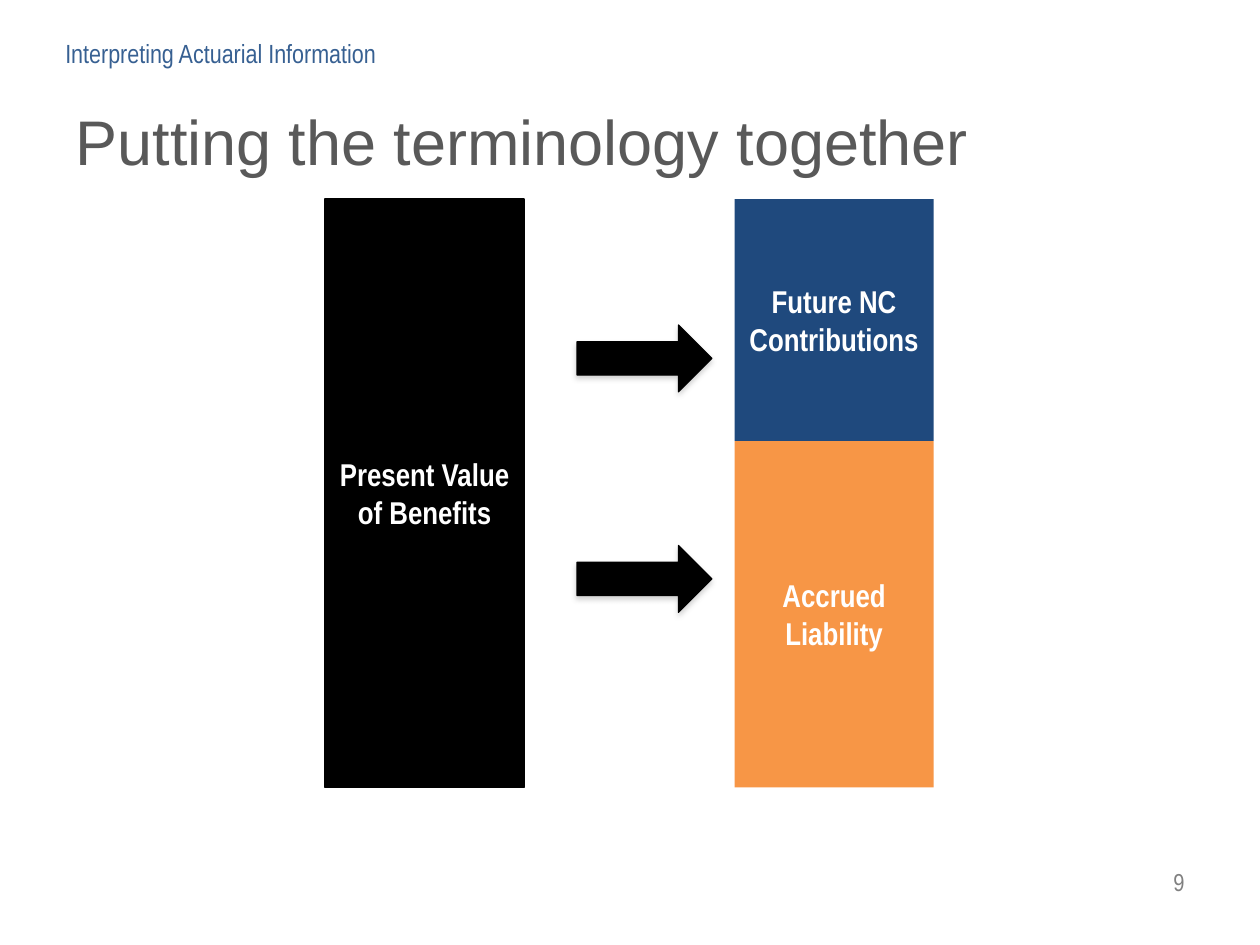
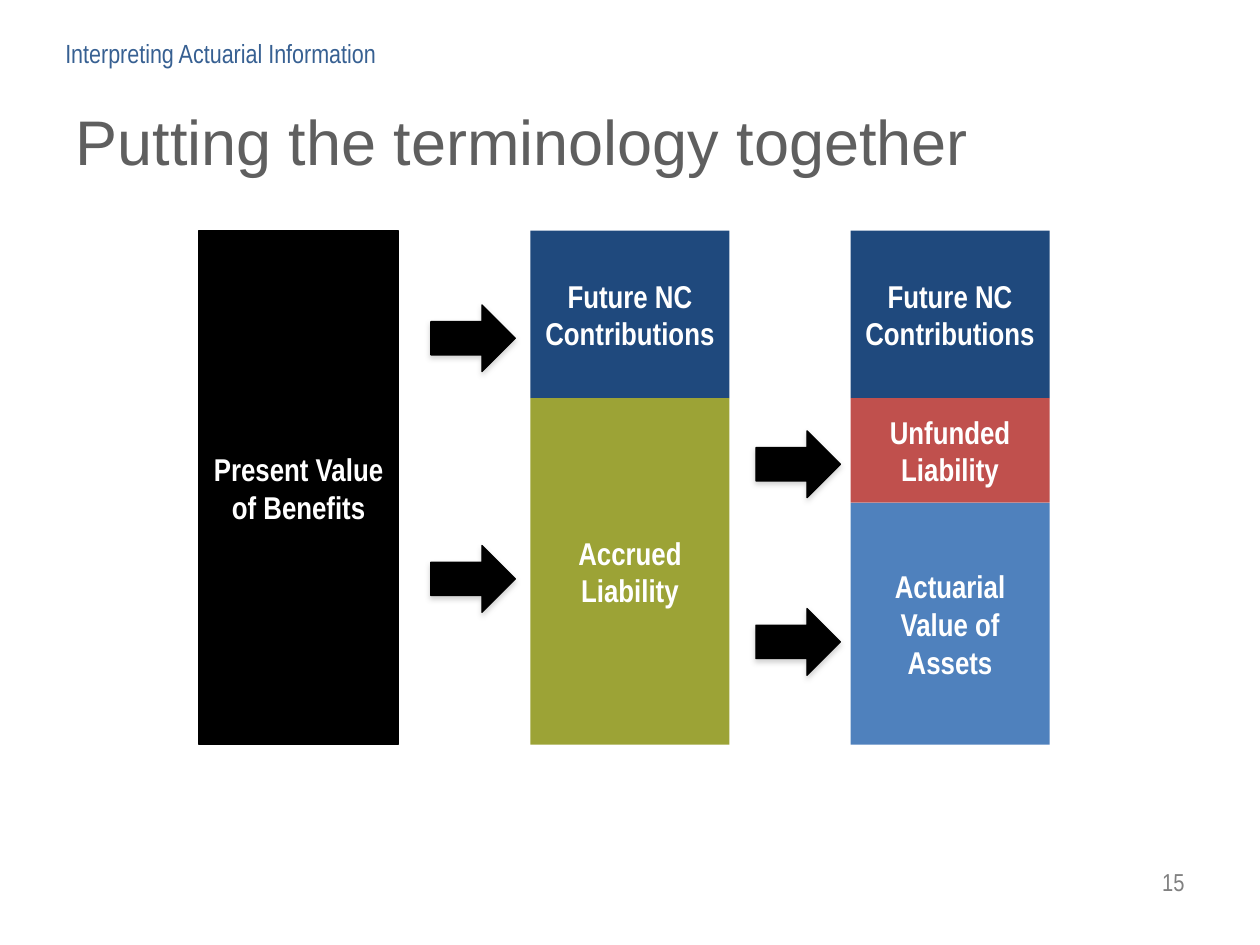
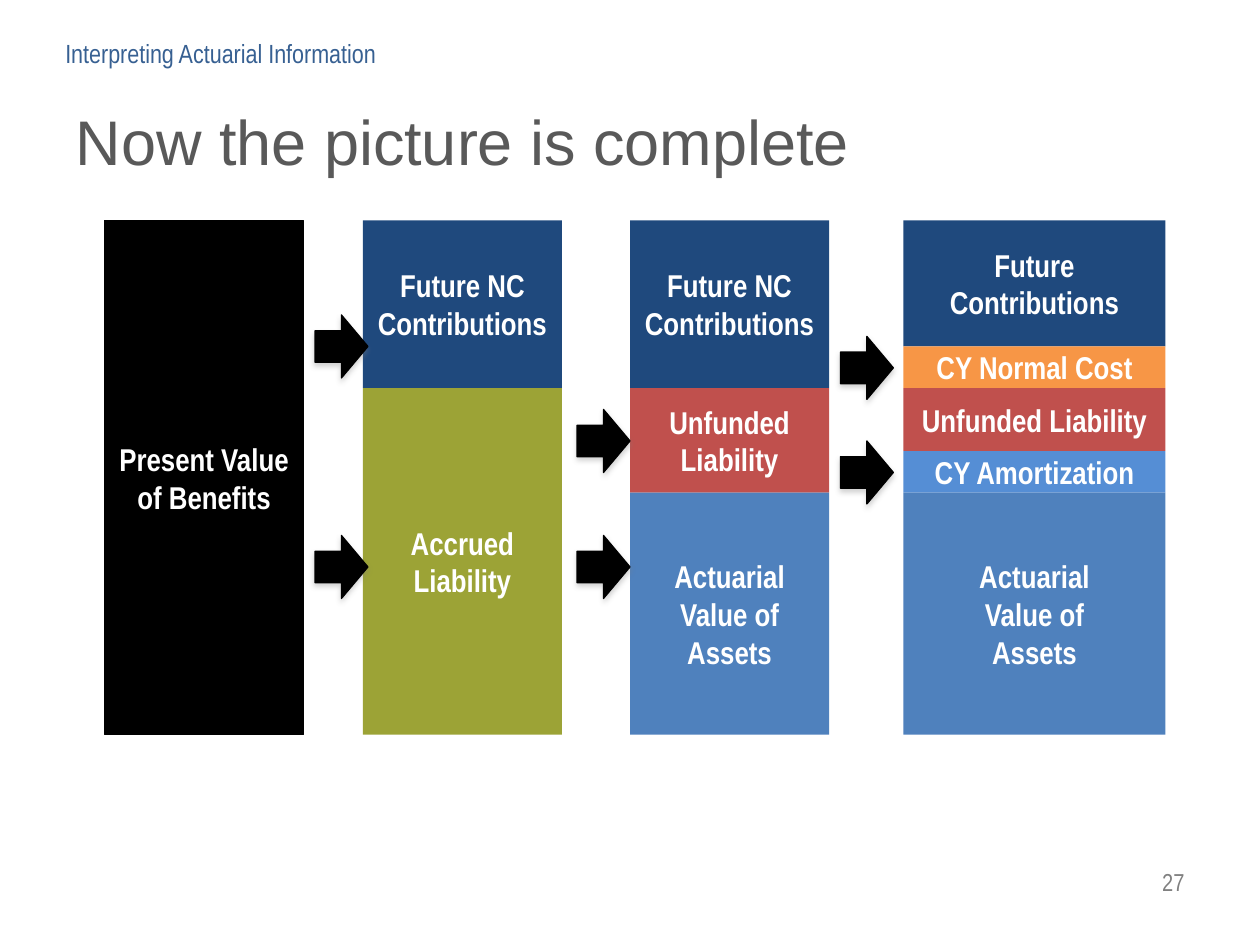
from lxml import etree
from pptx import Presentation
from pptx.dml.color import RGBColor
from pptx.enum.shapes import MSO_SHAPE
from pptx.enum.text import MSO_ANCHOR, MSO_AUTO_SIZE, PP_ALIGN
from pptx.oxml.ns import qn
from pptx.util import Inches, Pt

BLACK = RGBColor(0x00, 0x00, 0x00)
WHITE = RGBColor(0xFF, 0xFF, 0xFF)
NAVY = RGBColor(0x1F, 0x49, 0x7D)
ORANGE = RGBColor(0xF7, 0x96, 0x46)
OLIVE = RGBColor(0x9C, 0xA3, 0x36)
RED = RGBColor(0xC0, 0x50, 0x4D)
BLUE = RGBColor(0x4F, 0x81, 0xBD)
SKY = RGBColor(0x55, 0x8E, 0xD5)
HEAD = RGBColor(0x37, 0x60, 0x92)
GREY = RGBColor(0x80, 0x80, 0x80)
DARK = RGBColor(0x59, 0x59, 0x59)
SLATE = RGBColor(0x5F, 0x5F, 0x5F)
SANS, NARROW = "Arial", "Arial Narrow"

# Content: layers are (text, colour, height), listed from the top down
HEADER = "Interpreting Actuarial Information"
TOGETHER = "Putting the terminology together"
BENEFITS = "Present Value of Benefits"
FUTURE = ("Future NC Contributions", NAVY, 1.33)
ACCRUED = "Accrued Liability"
UNFUNDED = "Unfunded Liability"

SPLIT = [FUTURE, (ACCRUED, OLIVE, 2.75)]
FUNDED = [FUTURE, (UNFUNDED, RED, 0.83),
          ("Actuarial\nValue of Assets", BLUE, 1.92)]
YEAR = [("Future Contributions", NAVY, 1), ("CY Normal Cost", ORANGE, 0.33),
        (UNFUNDED, RED, 0.5), ("CY Amortization", SKY, 0.33),
        ("Actuarial\nValue of\nAssets", BLUE, 1.92)]

# Stacks are (left, width, layers); arrows are (left, tops)
SLIDES = [
    dict(number=9, title=TOGETHER, tone=DARK, top=1.58,
         stacks=[(2.58, 1.58, [(BENEFITS, BLACK, 4.67)]),
                 (5.83, 1.58, [("Future NC Contributions", NAVY, 1.92),
                               (ACCRUED, ORANGE, 2.75)])],
         size=(1.07, 0.53), arrows=[(4.58, (2.58, 4.33))]),
    dict(number=15, title=TOGETHER, tone=SLATE, top=1.83,
         stacks=[(1.58, 1.58, [(BENEFITS, BLACK, 4.08)]),
                 (4.21, 1.58, SPLIT), (6.75, 1.58, FUNDED)],
         size=(0.67, 0.53),
         arrows=[(3.42, (2.42, 4.33)), (6, (3.42, 4.83))]),
    dict(number=27, title="Now the picture is complete", tone=DARK, top=1.75,
         stacks=[(0.83, 1.58, [(BENEFITS, BLACK, 4.08)]),
                 (2.88, 1.58, SPLIT), (5, 1.58, FUNDED), (7.17, 2.08, YEAR)],
         size=(0.42, 0.5),
         arrows=[(2.5, (2.5, 4.25)), (4.58, (3.25, 4.25)),
                 (6.67, (2.67, 3.5))]),
]


def write(frame, text, size, color, font=NARROW, align=PP_ALIGN.LEFT, bold=False):
    frame.text = text
    frame.word_wrap = True
    for para in frame.paragraphs:
        para.alignment = align
        para.font.name = font
        para.font.size = Pt(size)
        para.font.bold = bold
        para.font.color.rgb = color


def add_label(slide, box, text, size, color, align=PP_ALIGN.LEFT):
    frame = slide.shapes.add_textbox(*map(Inches, box)).text_frame
    write(frame, text, size, color, align=align)
    frame.auto_size = MSO_AUTO_SIZE.SHAPE_TO_FIT_TEXT


def add_solid(slide, kind, box, color):
    shape = slide.shapes.add_shape(kind, *map(Inches, box))
    shape.shadow.inherit = False
    shape.fill.solid()
    shape.fill.fore_color.rgb = color
    if color == BLACK:
        shape.line.color.rgb = BLACK
        shape.line.width = Pt(0.75)
    else:
        shape.line.fill.background()
    return shape


def add_stack(slide, left, top, width, layers):
    for text, color, height in layers:
        block = add_solid(slide, MSO_SHAPE.RECTANGLE,
                          (left, top, width, height), color)
        block.text_frame.vertical_anchor = MSO_ANCHOR.MIDDLE
        write(block.text_frame, text, 18, WHITE, align=PP_ALIGN.CENTER, bold=True)
        top += height


def add_arrow(slide, left, top, size):
    arrow = add_solid(slide, MSO_SHAPE.RIGHT_ARROW, (left, top, *size), BLACK)
    # Soft grey shadow straight below
    effects = arrow.element.spPr.find(qn("a:effectLst"))
    shade = etree.SubElement(effects, qn("a:outerShdw"), blurRad=str(Pt(3.1)),
                             dist=str(Pt(1.8)), dir="5400000", rotWithShape="0")
    tint = etree.SubElement(shade, qn("a:srgbClr"), val=str(GREY))
    etree.SubElement(tint, qn("a:alpha"), val="35000")


def add_frame(deck, page):
    """Start a slide with its title, header and page number."""
    slide = deck.slides.add_slide(deck.slide_layouts[5])
    title = slide.shapes.title
    title.left, title.top, title.width, title.height = map(
        Inches, (0.5, 0.67, 9, 0.88))
    write(title.text_frame, page["title"], 36, page["tone"], SANS)
    title.text_frame.vertical_anchor = MSO_ANCHOR.MIDDLE
    title.text_frame.auto_size = MSO_AUTO_SIZE.NONE
    add_label(slide, (0.42, 0.25, 3, 0.35), HEADER, 15, HEAD)
    add_label(slide, (7.17, 6.83, 2.33, 0.33), str(page["number"]), 14, GREY,
              PP_ALIGN.RIGHT)
    return slide


def main():
    deck = Presentation()
    deck.slide_width, deck.slide_height = Inches(10), Inches(7.5)
    for page in SLIDES:
        slide = add_frame(deck, page)
        for left, width, layers in page["stacks"]:
            add_stack(slide, left, page["top"], width, layers)
        for left, tops in page["arrows"]:
            for top in tops:
                add_arrow(slide, left, top, page["size"])
    deck.save("out.pptx")


if __name__ == "__main__":
    main()
